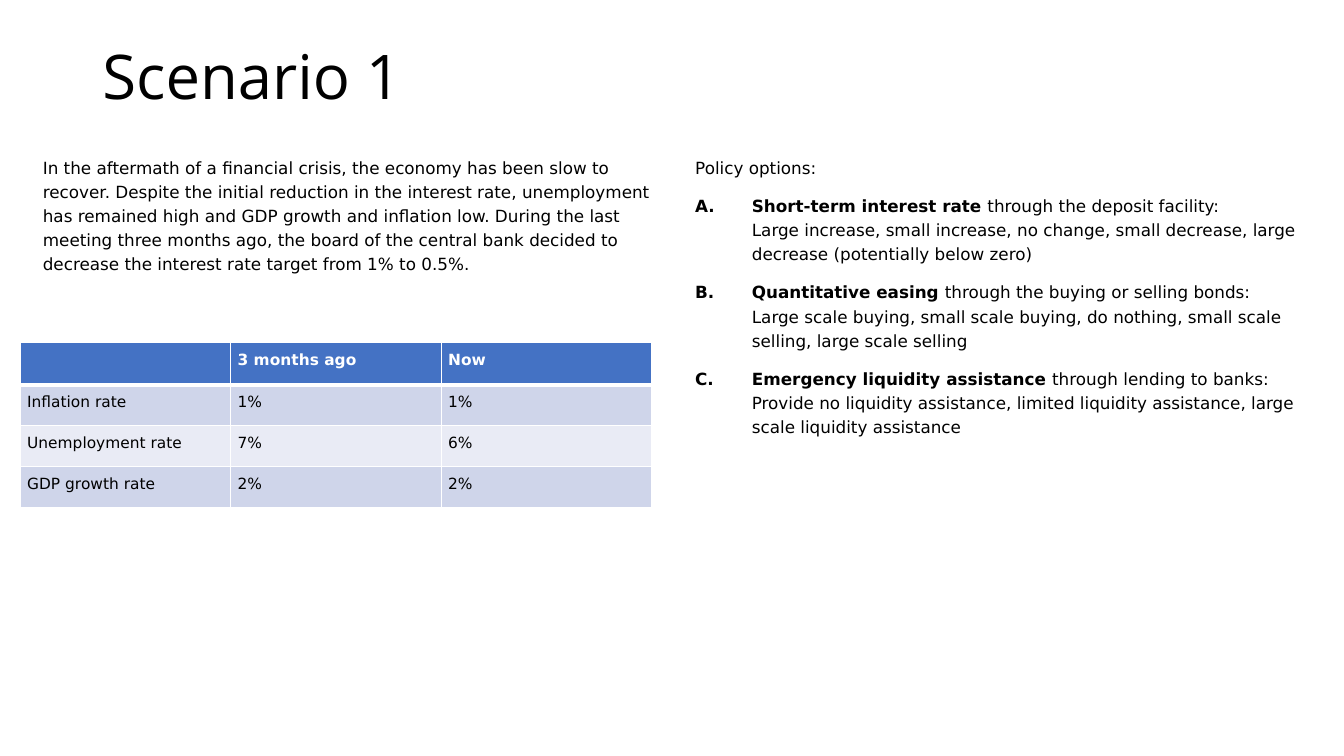
from dataclasses import dataclass

import pptx
import pptx.dml.color
import pptx.enum.text
import pptx.oxml
import pptx.oxml.ns
import pptx.presentation
import pptx.shapes.placeholder
import pptx.slide
import pptx.table
import pptx.text.text
import pptx.util

Pt = pptx.util.Pt


@dataclass(frozen=True)
class Theme:
    title_font: str = "Open Sans"
    body_font: str = "DejaVu Sans"
    title_size: float = 44
    body_size: float = 12
    table_size: float = 11
    ink: str = "000000"
    white: str = "FFFFFF"
    header: str = "4472C4"
    bands: tuple[str, str] = ("CFD5EA", "E9EBF5")


@dataclass(frozen=True)
class Box:
    left: float
    top: float
    width: float
    height: float


@dataclass(frozen=True)
class PolicyOption:
    name: str
    means: str
    choices: str


THEME = Theme()
TITLE_BOX = Box(66, 1.5, 894, 104)
SITUATION_BOX = Box(14.4, 106, 466, 394)
OPTIONS_BOX = Box(480.4, 106, 466, 394)
TABLE_BOX = Box(14.4, 244.8, 451.2, 116.8)

SITUATION = (
    "In the aftermath of a financial crisis, the economy has been slow to recover. "
    "Despite the initial reduction in the interest rate, unemployment has remained "
    "high and GDP growth and inflation low. During the last meeting three months ago, "
    "the board of the central bank decided to decrease the interest rate target "
    "from 1% to 0.5%."
)
OPTIONS = [
    PolicyOption(
        "Short-term interest rate ", "through the deposit facility: ",
        "Large increase, small increase, no change, small decrease, "
        "large decrease (potentially below zero)"),
    PolicyOption(
        "Quantitative easing ", "through the buying or selling bonds: ",
        "Large scale buying, small scale buying, do nothing, "
        "small scale selling, large scale selling"),
    PolicyOption(
        "Emergency liquidity assistance ", "through lending to banks: ",
        "Provide no liquidity assistance, limited liquidity assistance, "
        "large scale liquidity assistance"),
]
INDICATORS = [
    ("", "3 months ago", "Now"),
    ("Inflation rate", "1%", "1%"),
    ("Unemployment rate", "7%", "6%"),
    ("GDP growth rate", "2%", "2%"),
]


def rgb(color: str) -> pptx.dml.color.RGBColor:
    return pptx.dml.color.RGBColor.from_string(color)


def add_run(p: pptx.text.text._Paragraph, text: str, size: float,
            font: str = THEME.body_font, color: str = THEME.ink,
            bold: bool = False) -> None:
    r = p.add_run()
    r.text = text
    r.font.name, r.font.size, r.font.bold = font, Pt(size), bold
    r.font.color.rgb = rgb(color)


def place(sp: pptx.shapes.placeholder.SlidePlaceholder,
          box: Box) -> pptx.text.text.TextFrame:
    """Move a placeholder and return its text frame, with autofit off."""
    sp.left, sp.top = Pt(box.left), Pt(box.top)
    sp.width, sp.height = Pt(box.width), Pt(box.height)
    tf = sp.text_frame
    tf.word_wrap = True
    tf.auto_size = pptx.enum.text.MSO_AUTO_SIZE.NONE
    return tf


def format_paragraph(p: pptx.text.text._Paragraph, lettered: bool = False) -> None:
    """Set the body spacing and indents, with A. B. C. numbering if lettered."""
    p.line_spacing = 1.2
    p.space_before = Pt(10)
    p.alignment = pptx.enum.text.PP_ALIGN.LEFT
    pPr = p._p.get_or_add_pPr()
    pPr.set("marL", str(Pt(49.5 if lettered else 9)))
    pPr.set("indent", str(Pt(-40.5 if lettered else 0)))
    ns = pptx.oxml.ns.nsdecls("a")
    bullets = [f"<a:buNone {ns}/>"]
    if lettered:
        bullets = [
            f'<a:buClr {ns}><a:srgbClr val="{THEME.ink}"/></a:buClr>',
            f'<a:buFont {ns} typeface="{THEME.body_font}"/>',
            f'<a:buAutoNum {ns} type="alphaUcPeriod"/>',
        ]
    for xml in bullets:
        pPr.append(pptx.oxml.parse_xml(xml))


def fill_title(s: pptx.slide.Slide) -> None:
    tf = place(s.shapes.title, TITLE_BOX)
    tf.vertical_anchor = pptx.enum.text.MSO_ANCHOR.MIDDLE
    p = tf.paragraphs[0]
    p.alignment = pptx.enum.text.PP_ALIGN.LEFT
    add_run(p, "Scenario 1", THEME.title_size, THEME.title_font)


def fill_situation(s: pptx.slide.Slide) -> None:
    p = place(s.placeholders[1], SITUATION_BOX).paragraphs[0]
    format_paragraph(p)
    add_run(p, SITUATION, THEME.body_size)


def fill_options(s: pptx.slide.Slide) -> None:
    tf = place(s.placeholders[2], OPTIONS_BOX)
    p = tf.paragraphs[0]
    format_paragraph(p)
    add_run(p, "Policy options:", THEME.body_size)
    for option in OPTIONS:
        p = tf.add_paragraph()
        format_paragraph(p, lettered=True)
        add_run(p, option.name, THEME.body_size, bold=True)
        add_run(p, option.means, THEME.body_size)
        p.add_line_break()
        add_run(p, option.choices, THEME.body_size)


def add_borders(cell: pptx.table._Cell, top: float, bottom: float) -> None:
    tcPr = cell._tc.get_or_add_tcPr()
    for side, width in (("L", 1), ("R", 1), ("T", top), ("B", bottom)):
        tcPr.append(pptx.oxml.parse_xml(
            f'<a:ln{side} {pptx.oxml.ns.nsdecls("a")} w="{Pt(width)}"><a:solidFill>'
            f'<a:srgbClr val="{THEME.white}"/></a:solidFill></a:ln{side}>'))


def fill_cell(cell: pptx.table._Cell, text: str, row: int) -> None:
    is_header = row == 0
    add_borders(cell, top=3 if row == 1 else 1, bottom=3 if is_header else 1)
    cell.fill.solid()
    cell.fill.fore_color.rgb = rgb(
        THEME.header if is_header else THEME.bands[(row - 1) % 2])
    cell.margin_left = cell.margin_right = Pt(5)
    cell.margin_top = cell.margin_bottom = Pt(5)
    p = cell.text_frame.paragraphs[0]
    p.line_spacing = 1.07
    p.space_after = Pt(8)
    add_run(p, text, THEME.table_size, bold=is_header,
            color=THEME.white if is_header else THEME.ink)


def add_indicator_table(s: pptx.slide.Slide) -> None:
    box = TABLE_BOX
    table = s.shapes.add_table(
        len(INDICATORS), len(INDICATORS[0]), Pt(box.left), Pt(box.top),
        Pt(box.width), Pt(box.height)).table
    for row, texts in enumerate(INDICATORS):
        for column, text in enumerate(texts):
            fill_cell(table.cell(row, column), text, row)


def main() -> None:
    prs: pptx.presentation.Presentation = pptx.Presentation()
    prs.slide_width, prs.slide_height = Pt(960), Pt(540)
    two_content = prs.slide_layouts.get_by_name("Two Content")
    s = prs.slides.add_slide(two_content)
    fill_title(s)
    fill_situation(s)
    fill_options(s)
    add_indicator_table(s)
    prs.save("out.pptx")


if __name__ == "__main__":
    main()
